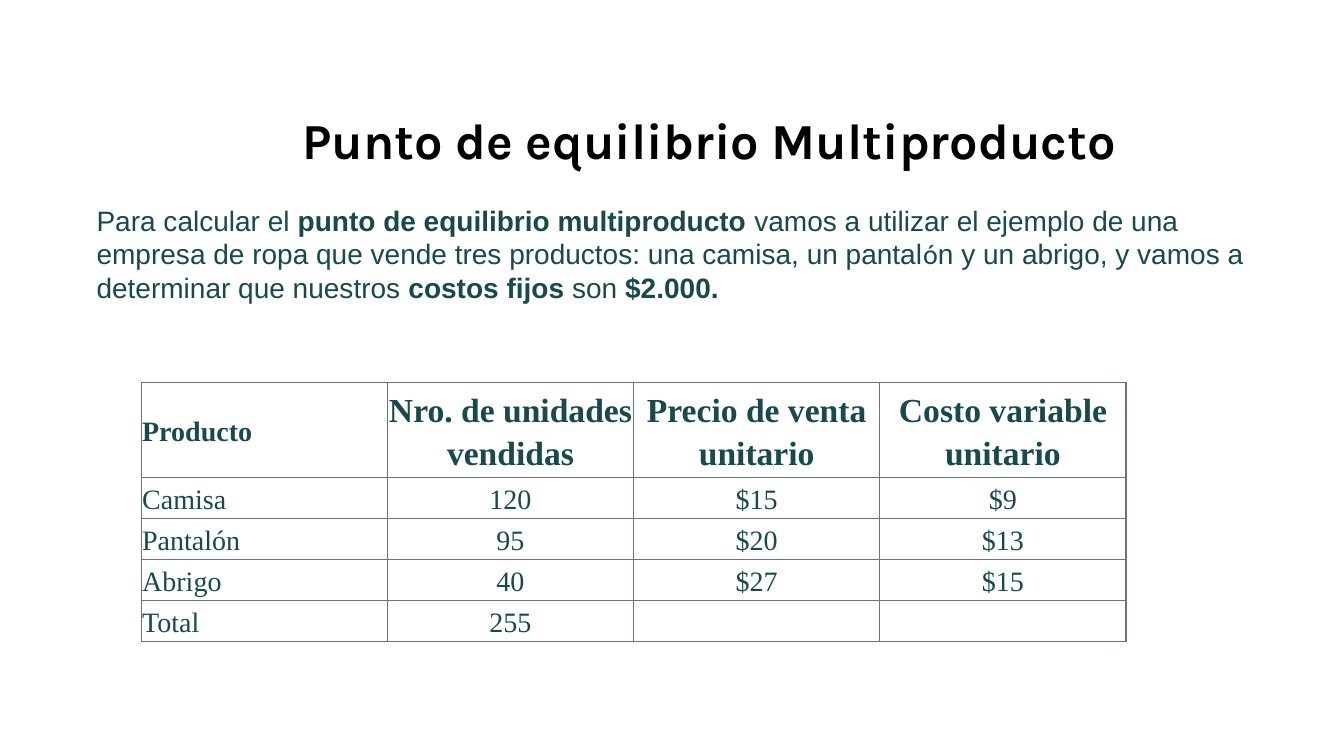
import pptx
import pptx.util
import pptx.dml.color
import pptx.enum.text
import pptx.oxml
import pptx.oxml.ns
from dataclasses import dataclass

Pt = pptx.util.Pt
Align = pptx.enum.text.PP_ALIGN
Anchor = pptx.enum.text.MSO_ANCHOR

TITLE = "Punto de equilibrio Multiproducto"
INTRO = [
    ("Para calcular el ", {}),
    ("punto de equilibrio multiproducto ", {"bold": True}),
    ("vamos a utilizar el ejemplo de una empresa de ropa que vende "
     "tres productos: una camisa, un pantal", {}),
    ("ó", {"font": "Calibri"}),
    ("n y un abrigo, y vamos a determinar que nuestros ", {}),
    ("costos fijos ", {"bold": True}),
    ("son ", {}),
    ("$2.000.", {"bold": True}),
]
PRODUCTS = [
    ("Producto", "Nro. de unidades vendidas", "Precio de venta unitario", "Costo variable unitario"),
    ("Camisa", "120", "$15", "$9"),
    ("Pantalón", "95", "$20", "$13"),
    ("Abrigo", "40", "$27", "$15"),
    ("Total", "255", "", ""),
]


@dataclass(frozen=True)
class Theme:
    title_color: str = "000000"
    text_color: str = "17494D"
    border_color: str = "68737D"
    title_font: str = "Karla"
    body_font: str = "Arial"
    table_font: str = "Times New Roman"
    title_size: int = 36
    header_size: int = 24
    body_size: int = 20


theme = Theme()


def add_text(para, text, font=theme.body_font, size=theme.body_size,
             color=theme.text_color, bold=False):
    span = para.add_run()
    span.text = text
    span.font.name = font
    span.font.size = Pt(size)
    span.font.bold = bold
    span.font.color.rgb = pptx.dml.color.RGBColor.from_string(color)


def add_box(page, left, top, width, height, anchor):
    box = page.shapes.add_textbox(Pt(left), Pt(top), Pt(width), Pt(height))
    box.text_frame.word_wrap = True
    box.text_frame.vertical_anchor = anchor
    return box.text_frame.paragraphs[0]


def add_borders(cell):
    properties = cell._tc.get_or_add_tcPr()
    for position, side in enumerate(("lnL", "lnR", "lnT", "lnB")):
        properties.insert(position, pptx.oxml.parse_xml(
            f'<a:{side} {pptx.oxml.ns.nsdecls("a")} w="{Pt(1)}"><a:solidFill>'
            f'<a:srgbClr val="{theme.border_color}"/></a:solidFill></a:{side}>'))


def add_products(page, left, top, column_width, header_height, row_height):
    columns = len(PRODUCTS[0])
    heights = [header_height] + [row_height] * (len(PRODUCTS) - 1)
    table = page.shapes.add_table(len(PRODUCTS), columns, Pt(left), Pt(top),
                                  Pt(column_width * columns), Pt(sum(heights))).table
    table.first_row = False
    table.horz_banding = False
    for column in table.columns:
        column.width = Pt(column_width)
    for r, (values, height) in enumerate(zip(PRODUCTS, heights)):
        table.rows[r].height = Pt(height)
        for c, value in enumerate(values):
            cell = table.cell(r, c)
            cell.fill.background()
            cell.vertical_anchor = Anchor.MIDDLE
            cell.margin_left = cell.margin_right = Pt(0.75)
            cell.margin_top = cell.margin_bottom = Pt(0.75)
            add_borders(cell)
            para = cell.text_frame.paragraphs[0]
            para.line_spacing = 1.15
            para.alignment = Align.CENTER if c else Align.LEFT
            if value:
                size = theme.header_size if r == 0 and c else theme.body_size
                add_text(para, value, font=theme.table_font, size=size, bold=r == 0)


def main():
    deck = pptx.Presentation()
    deck.slide_width, deck.slide_height = Pt(960), Pt(540)
    page = deck.slides.add_slide(deck.slide_layouts[6])

    title = add_box(page, 208.8, 74.2, 638.6, 104.4, Anchor.TOP)
    add_text(title, TITLE, font=theme.title_font, size=theme.title_size,
             color=theme.title_color, bold=True)

    intro = add_box(page, 61.9, 141.1, 842.4, 80, Anchor.MIDDLE)
    for text, style in INTRO:
        add_text(intro, text, **style)

    add_products(page, left=100.8, top=273.3, column_width=175.9,
                 header_height=67.7, row_height=29.3)
    deck.save("out.pptx")


if __name__ == "__main__":
    main()
